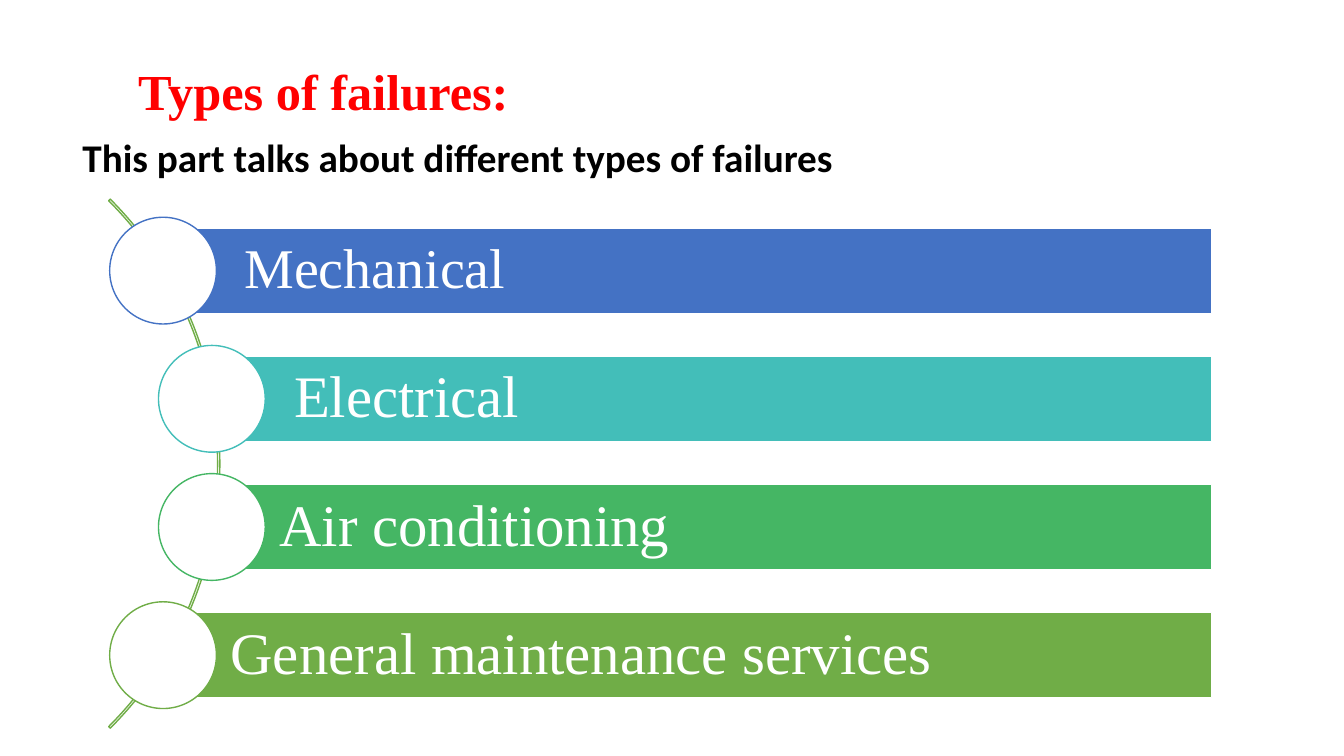
from pptx import Presentation
from pptx.dml.color import RGBColor
from pptx.enum.shapes import MSO_SHAPE as SHAPE
from pptx.enum.text import MSO_ANCHOR as ANCHOR, MSO_AUTO_SIZE as AUTO, PP_ALIGN as ALIGN
from pptx.util import Cm, Pt


def rgb(value):
    return RGBColor.from_string(value)


def write(tf, text, size, font, color, bold=False):
    tf.word_wrap = True
    tf.auto_size = AUTO.NONE
    p = tf.paragraphs[0]
    p.alignment = ALIGN.LEFT
    p.line_spacing = 0.9
    r = p.add_run()
    r.text = text
    r.font.size = Pt(size)
    r.font.name = font
    r.font.bold = bold
    r.font.color.rgb = rgb(color)


prs = Presentation()
prs.slide_width, prs.slide_height = Cm(33.87), Cm(19.05)
s = prs.slides.add_slide(prs.slide_layouts[5])

# Title
title = s.shapes.title
title.left, title.top, title.width, title.height = Cm(3.23), Cm(1.37), Cm(27.94), Cm(2.03)
title.text_frame.vertical_anchor = ANCHOR.MIDDLE
write(title.text_frame, "Types of failures:", 36, "Times New Roman", "FF0000", True)

# Introductory line
intro = s.shapes.add_textbox(Cm(1.83), Cm(3.38), Cm(29.34), Cm(1.4))
write(intro.text_frame, "This part talks about different types of failures", 28, "Calibri", "000000", True)

# Arc behind the list
arc = s.shapes.add_shape(SHAPE.BLOCK_ARC, Cm(-13.31), Cm(2.26), Cm(18.85), Cm(18.85))
arc.adjustments[0] = 189
arc.adjustments[1] = 27
arc.adjustments[2] = 0.003
arc.fill.background()
arc.line.color.rgb = rgb("70AD47")
arc.line.width = Pt(1)
arc.shadow.inherit = False

# Failure types: a bar with a circle centred on its left edge
failures = [
    (" Mechanical", 40, "4472C4", 4.11),
    (" Electrical", 42, "43BEB9", 5.34),
    ("Air conditioning", 42, "45B664", 5.34),
    ("General maintenance services", 42, "70AD47", 4.11),
]
FIRST_MIDDLE, PITCH = 6.82, 3.23
BAR_RIGHT, BAR_HEIGHT, DIAMETER = 30.53, 2.15, 2.69

for i, (name, size, color, left) in enumerate(failures):
    middle = FIRST_MIDDLE + i * PITCH

    bar = s.shapes.add_shape(SHAPE.RECTANGLE, Cm(left), Cm(middle - BAR_HEIGHT / 2),
                             Cm(BAR_RIGHT - left), Cm(BAR_HEIGHT))
    circle = s.shapes.add_shape(SHAPE.OVAL, Cm(left - DIAMETER / 2), Cm(middle - DIAMETER / 2),
                                Cm(DIAMETER), Cm(DIAMETER))
    for sp, fill, line in ((bar, color, "FFFFFF"), (circle, "FFFFFF", color)):
        sp.fill.solid()
        sp.fill.fore_color.rgb = rgb(fill)
        sp.line.color.rgb = rgb(line)
        sp.line.width = Pt(1)
        sp.shadow.inherit = False

    tf = bar.text_frame
    tf.vertical_anchor = ANCHOR.MIDDLE
    tf.margin_left = Cm(1.7)
    tf.margin_right = tf.margin_top = tf.margin_bottom = Cm(0.3)
    write(tf, name, size, "Times New Roman", "FFFFFF")

prs.save("out.pptx")
